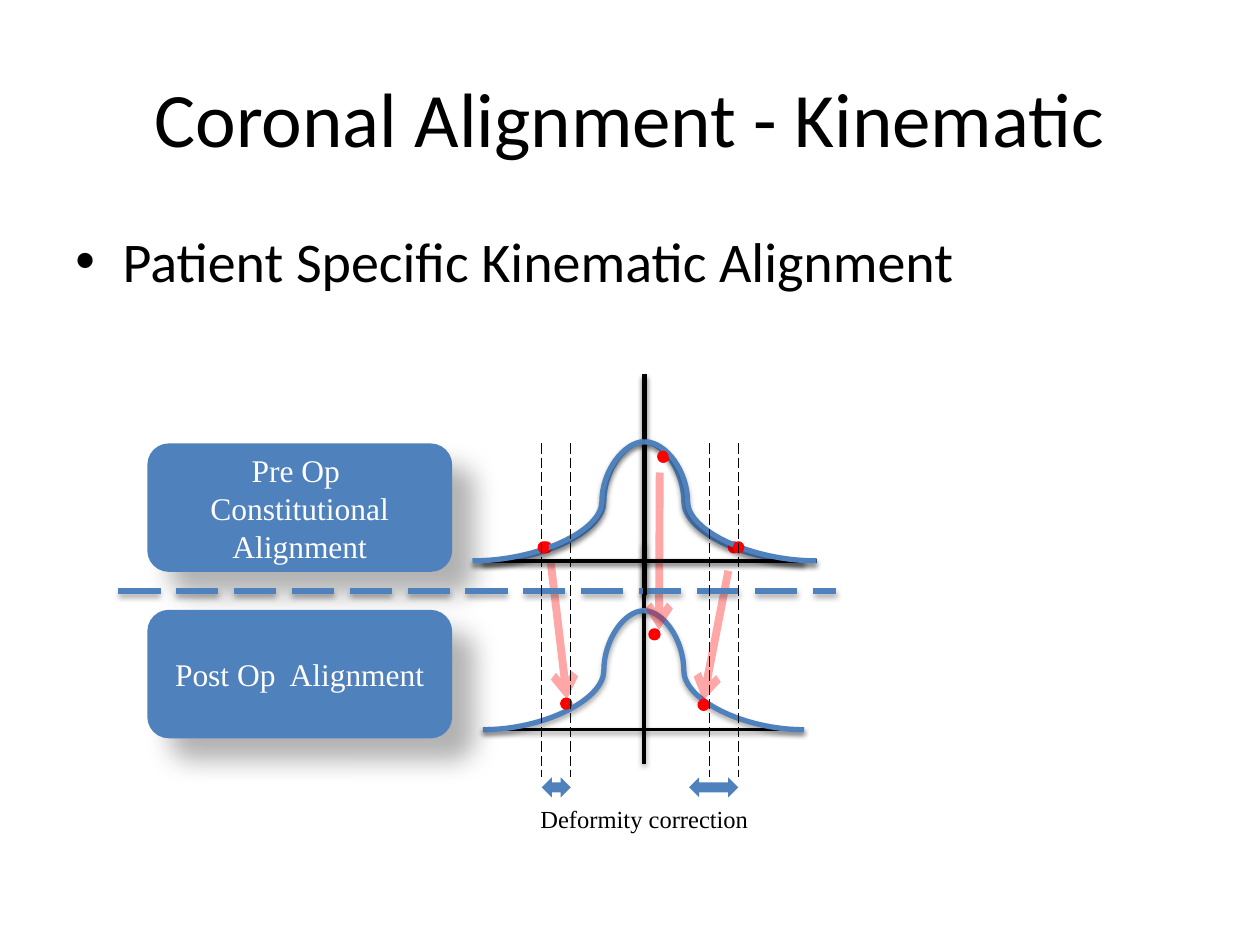
from lxml import etree
from pptx import Presentation
from pptx.dml.color import RGBColor
from pptx.enum.dml import MSO_LINE
from pptx.enum.shapes import MSO_CONNECTOR as LINK, MSO_SHAPE as SHAPE
from pptx.enum.text import MSO_ANCHOR as ANCHOR, PP_ALIGN as ALIGN
from pptx.oxml.ns import qn
from pptx.util import Pt

COLORS = {"black": "000000", "white": "FFFFFF", "blue": "4F81BD", "red": "FF0000"}
AXIS_SHADOW = (38, 3.1, 1.6, 90)
CURVE_SHADOW = (35, 3.1, 1.8, 90)
BOX_SHADOW = (30, 15, 18, 45)
SERIF = "Times New Roman"
DROP = 96.5


def rgb(name):
    return RGBColor.from_string(COLORS[name])


def child(parent, tag, **attributes):
    element = etree.SubElement(parent, qn(tag))
    for key, value in attributes.items():
        element.set(key, str(value))
    return element


def cast_shadow(effects, opacity, blur, distance, angle):
    shadow = child(effects, "a:outerShdw", blurRad=Pt(blur), dist=Pt(distance),
                   dir=angle * 60000, algn="ctr", rotWithShape=0)
    tint = child(shadow, "a:srgbClr", val=COLORS["black"])
    child(tint, "a:alpha", val=opacity * 1000)


def add_line(shapes, start, end, color, width, shadow=None, kind=LINK.STRAIGHT):
    line = shapes.add_connector(kind, *(Pt(v) for v in (*start, *end)))
    line.line.color.rgb = rgb(color)
    line.line.width = Pt(width)
    effects = child(line._element.spPr, "a:effectLst")
    if shadow:
        cast_shadow(effects, *shadow)
    return line


def add_dashes(shapes, start, end, color, width, shadow=None):
    dashes = add_line(shapes, start, end, color, width, shadow)
    dashes.line.dash_style = MSO_LINE.LONG_DASH


def add_shift_arrow(shapes, start, end):
    arrow = add_line(shapes, start, end, "red", 4.5)
    stroke = arrow.line._get_or_add_ln()
    child(stroke.find(".//" + qn("a:srgbClr")), "a:alpha", val=34000)
    child(stroke, "a:tailEnd", type="arrow")


def add_bell(shapes, left, center, right, drop=0):
    base, peak = 320.5 + drop, 252.5 + drop
    add_line(shapes, (center, 214 + drop), (center, 340 + drop), "black", 2, AXIS_SHADOW)
    add_line(shapes, (left, base), (right, base), "black", 2, AXIS_SHADOW)
    for foot in (left, right):
        curve = add_line(shapes, (foot, base), (center, peak), "blue", 3,
                         CURVE_SHADOW, LINK.CURVE)
        guides = curve._element.spPr.find(".//" + qn("a:avLst"))
        child(guides, "a:gd", name="adj1", fmla="val 75100")


def add_filled(shapes, kind, left, top, width, height, color):
    shape = shapes.add_shape(kind, *(Pt(v) for v in (left, top, width, height)))
    shape.shadow.inherit = False
    shape.fill.solid()
    shape.fill.fore_color.rgb = rgb(color)
    shape.line.fill.background()
    return shape


def add_patient(shapes, left, top, width):
    dot = add_filled(shapes, SHAPE.DONUT, left, top, width, 5, "red")
    dot.line.color.rgb = rgb("red")
    dot.line.width = Pt(2)


def write(shape, text, size, font, color, align=ALIGN.CENTER, anchor=ANCHOR.MIDDLE):
    frame = shape.text_frame
    frame.word_wrap = True
    frame.vertical_anchor = anchor
    frame.text = text
    paragraph = frame.paragraphs[0]
    paragraph.alignment = align
    for run in paragraph.runs:
        run.font.size = Pt(size)
        run.font.name = font
        run.font.color.rgb = rgb(color)
    return paragraph


def add_text(shapes, left, top, width, height, *text_style):
    box = shapes.add_textbox(*(Pt(v) for v in (left, top, width, height)))
    return write(box, *text_style)


def add_stage(shapes, top, label):
    stage = add_filled(shapes, SHAPE.ROUNDED_RECTANGLE, 84.2, top, 174.2, 73.4, "blue")
    cast_shadow(stage._element.spPr.find(qn("a:effectLst")), *BOX_SHADOW)
    write(stage, label, 18, SERIF, "white")


def add_bullet(paragraph):
    properties = paragraph._p.get_or_add_pPr()
    properties.set("marL", str(Pt(27)))
    properties.set("indent", str(Pt(-27)))
    child(properties, "a:buFont", typeface="Arial")
    child(properties, "a:buChar", char="•")


def main():
    deck = Presentation()
    deck.slide_width, deck.slide_height = Pt(720), Pt(540)
    shapes = deck.slides.add_slide(deck.slide_layouts[6]).shapes

    add_text(shapes, 36, 21.6, 648, 90, "Coronal Alignment - Kinematic", 44, "Calibri", "black")
    add_bullet(add_text(shapes, 36, 126, 648, 356.4, "Patient Specific Kinematic Alignment",
                        32, "Calibri", "black", ALIGN.LEFT, ANCHOR.TOP))

    alignment = shapes.add_group_shape().shapes
    for drop in (0, DROP):
        add_bell(alignment, 276, 368, 459.5, drop)
    for left, top in ((309.6, 310.3), (321.1, 399.6), (399.6, 400.3),
                      (371.5, 360), (376.6, 258.5), (416.9, 310.3)):
        add_patient(alignment, left, top, 5)
    for start, end in (((314.6, 320.4), (324, 399.6)),
                       ((416.2, 326.2), (401.8, 400.3)),
                       ((377, 270), (376.6, 360))):
        add_shift_arrow(alignment, start, end)

    add_stage(shapes, 253.4, "Pre Op  Constitutional Alignment")
    add_stage(shapes, 348.5, "Post Op  Alignment")
    add_dashes(shapes, (67.7, 337.7), (478, 337.7), "blue", 3, CURVE_SHADOW)

    pre_op = shapes.add_group_shape().shapes
    add_bell(pre_op, 270, 368.5, 466.6)
    for left, top in ((308.2, 310.3), (376.6, 258.5), (419.8, 310.3)):
        add_patient(pre_op, left, top, 4.5)

    for limit in (309.6, 326.2, 405.4, 421.9):
        add_dashes(shapes, (limit, 253.4), (limit, 444.2), "black", 0.75)
    add_text(shapes, 292.3, 455.8, 151.9, 24.5, "Deformity correction", 14, SERIF, "black",
             ALIGN.CENTER, ANCHOR.TOP)
    for left, width in ((393.8, 28.1), (309.6, 16.6)):
        add_filled(shapes, SHAPE.LEFT_RIGHT_ARROW, left, 444.2, width, 11.5, "blue")

    deck.save("out.pptx")


if __name__ == "__main__":
    main()
